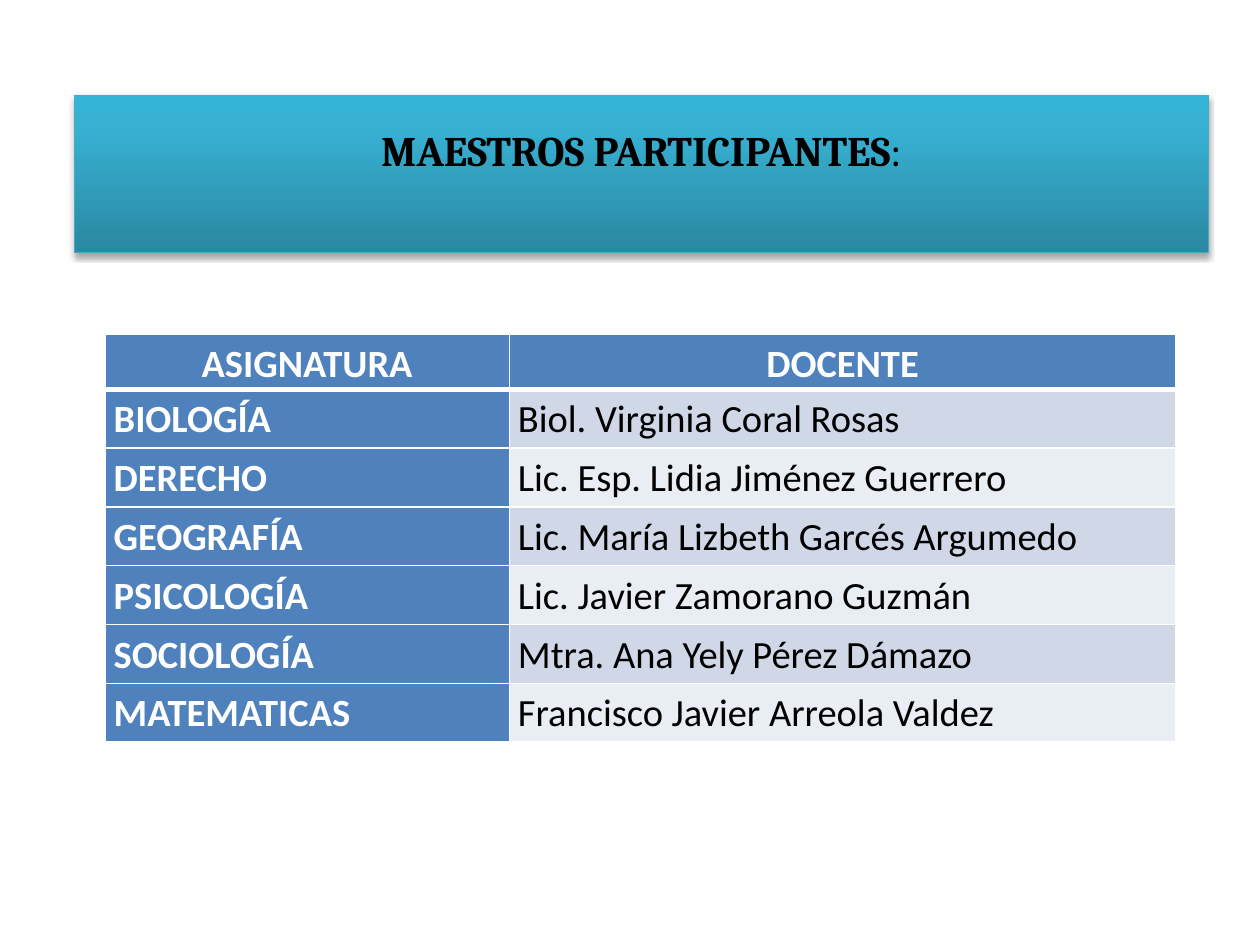
from dataclasses import dataclass

from lxml import etree
from pptx import Presentation
from pptx.dml.color import RGBColor
from pptx.enum.text import MSO_ANCHOR, PP_ALIGN
from pptx.oxml.ns import qn
from pptx.util import Pt

CENTER, LEFT = PP_ALIGN.CENTER, PP_ALIGN.LEFT
MIDDLE, TOP = MSO_ANCHOR.MIDDLE, MSO_ANCHOR.TOP

TITLE = [("MAESTROS PARTICIPANTES", True), (":", False)]
HEADINGS = ("ASIGNATURA", "DOCENTE")
TEACHERS = [
    ("BIOLOGÍA", "Biol. Virginia Coral Rosas"),
    ("DERECHO", "Lic. Esp. Lidia Jiménez Guerrero"),
    ("GEOGRAFÍA", "Lic. María Lizbeth Garcés Argumedo"),
    ("PSICOLOGÍA", "Lic. Javier Zamorano Guzmán"),
    ("SOCIOLOGÍA", "Mtra. Ana Yely Pérez Dámazo"),
    ("MATEMATICAS", "Francisco Javier Arreola Valdez"),
]


@dataclass(frozen=True)
class Theme:
    title_font: str = "Cambria"
    table_font: str = "Calibri"
    title_size: float = 24
    table_size: float = 22
    dark: str = "000000"
    light: str = "FFFFFF"
    accent: str = "4F81BD"
    bands: tuple = ("D0D8E8", "E9EDF4")
    title_line: str = "46AAC5"
    title_stops: tuple = ((0, "2A88A2"), (80, "37B1D2"), (100, "34B4D6"))


def apply(target, values):
    for name, value in values.items():
        setattr(target, name, value)


def add_xml(parent, tag, **attributes):
    return etree.SubElement(parent, qn(tag), attributes)


class SlideBuilder:
    def __init__(self, page, theme):
        self.page = page
        self.theme = theme

    def span(self, para, text, font, size, color, bold):
        span = para.add_run()
        span.text = text
        apply(span.font, {"name": font, "size": Pt(size), "bold": bold})
        span.font.color.rgb = RGBColor.from_string(color)

    def title(self, spans, left, top, width, height):
        theme = self.theme
        box = self.page.shapes.title
        apply(box, {"left": Pt(left), "top": Pt(top),
                    "width": Pt(width), "height": Pt(height)})
        self.gradient(box)
        box.line.color.rgb = RGBColor.from_string(theme.title_line)
        box.line.width = Pt(0.75)
        self.shadow(box)
        # The deep bottom margin lifts the text above the middle
        apply(box.text_frame, {"vertical_anchor": MIDDLE, "word_wrap": True,
                               "margin_bottom": Pt(32)})
        para = box.text_frame.paragraphs[0]
        para.alignment = CENTER
        for text, bold in spans:
            self.span(para, text, theme.title_font, theme.title_size, theme.dark, bold)

    def gradient(self, box):
        box.fill.gradient()
        box.fill.gradient_angle = 90
        stops = box._element.spPr.find(qn("a:gradFill")).find(qn("a:gsLst"))
        for stop in list(stops):
            stops.remove(stop)
        for position, color in self.theme.title_stops:
            stop = add_xml(stops, "a:gs", pos=str(position * 1000))
            add_xml(stop, "a:srgbClr", val=color)

    def shadow(self, box):
        effects = add_xml(box._element.spPr, "a:effectLst")
        shadow = add_xml(effects, "a:outerShdw", blurRad=str(Pt(3.1)),
                         dist=str(Pt(1.8)), dir="5400000", rotWithShape="0")
        color = add_xml(shadow, "a:srgbClr", val=self.theme.dark)
        add_xml(color, "a:alpha", val="35000")

    def borders(self, cell, widths):
        properties = cell._tc.get_or_add_tcPr()
        for side, width in widths.items():
            line = add_xml(properties, f"a:ln{side}", w=str(Pt(width)))
            fill = add_xml(line, "a:solidFill")
            add_xml(fill, "a:srgbClr", val=self.theme.light)

    def cell(self, cell, text, fill, color, bold, align, widths):
        self.borders(cell, widths)
        cell.fill.solid()
        cell.fill.fore_color.rgb = RGBColor.from_string(fill)
        apply(cell, {"margin_left": Pt(5), "margin_right": Pt(5),
                     "margin_top": 0, "margin_bottom": 0, "vertical_anchor": TOP})
        para = cell.text_frame.paragraphs[0]
        apply(para, {"alignment": align, "line_spacing": 1.15})
        self.span(para, text, self.theme.table_font, self.theme.table_size, color, bold)

    def table(self, rows, left, top, column_widths, header_height, row_height):
        theme = self.theme
        heights = [header_height] + [row_height] * (len(rows) - 1)
        table = self.page.shapes.add_table(
            len(rows), len(column_widths), Pt(left), Pt(top),
            Pt(sum(column_widths)), Pt(sum(heights))).table
        table.first_col = True
        for column, width in zip(table.columns, column_widths):
            column.width = Pt(width)
        for r, (texts, height) in enumerate(zip(rows, heights)):
            table.rows[r].height = Pt(height)
            # A thick rule separates the header from the first row
            widths = {"L": 1, "R": 1, "T": 3 if r == 1 else 1, "B": 3 if r == 0 else 1}
            for c, text in enumerate(texts):
                strong = r == 0 or c == 0
                self.cell(table.cell(r, c), text,
                          theme.accent if strong else theme.bands[(r - 1) % 2],
                          theme.light if strong else theme.dark,
                          strong, CENTER if r == 0 else LEFT, widths)


def main():
    deck = Presentation()
    apply(deck, {"slide_width": Pt(720), "slide_height": Pt(540)})
    page = deck.slides.add_slide(deck.slide_layouts[5])
    builder = SlideBuilder(page, Theme())

    # Title banner
    builder.title(TITLE, left=42.5, top=54.5, width=648, height=90)

    # Subjects and teachers
    builder.table([HEADINGS, *TEACHERS], left=60, top=191, column_widths=(231, 381),
                  header_height=31.5, row_height=33.6)

    deck.save("out.pptx")


if __name__ == "__main__":
    main()
